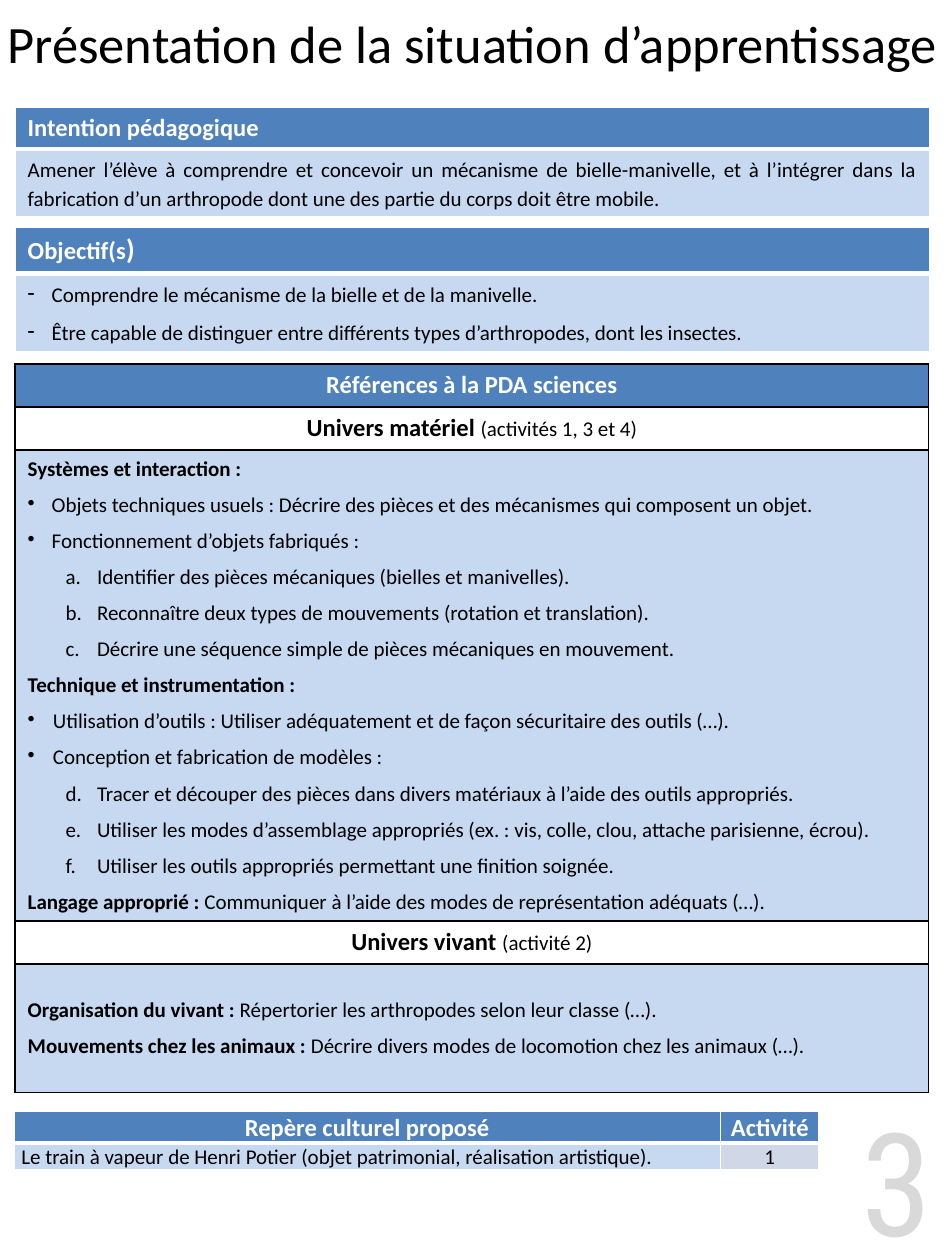
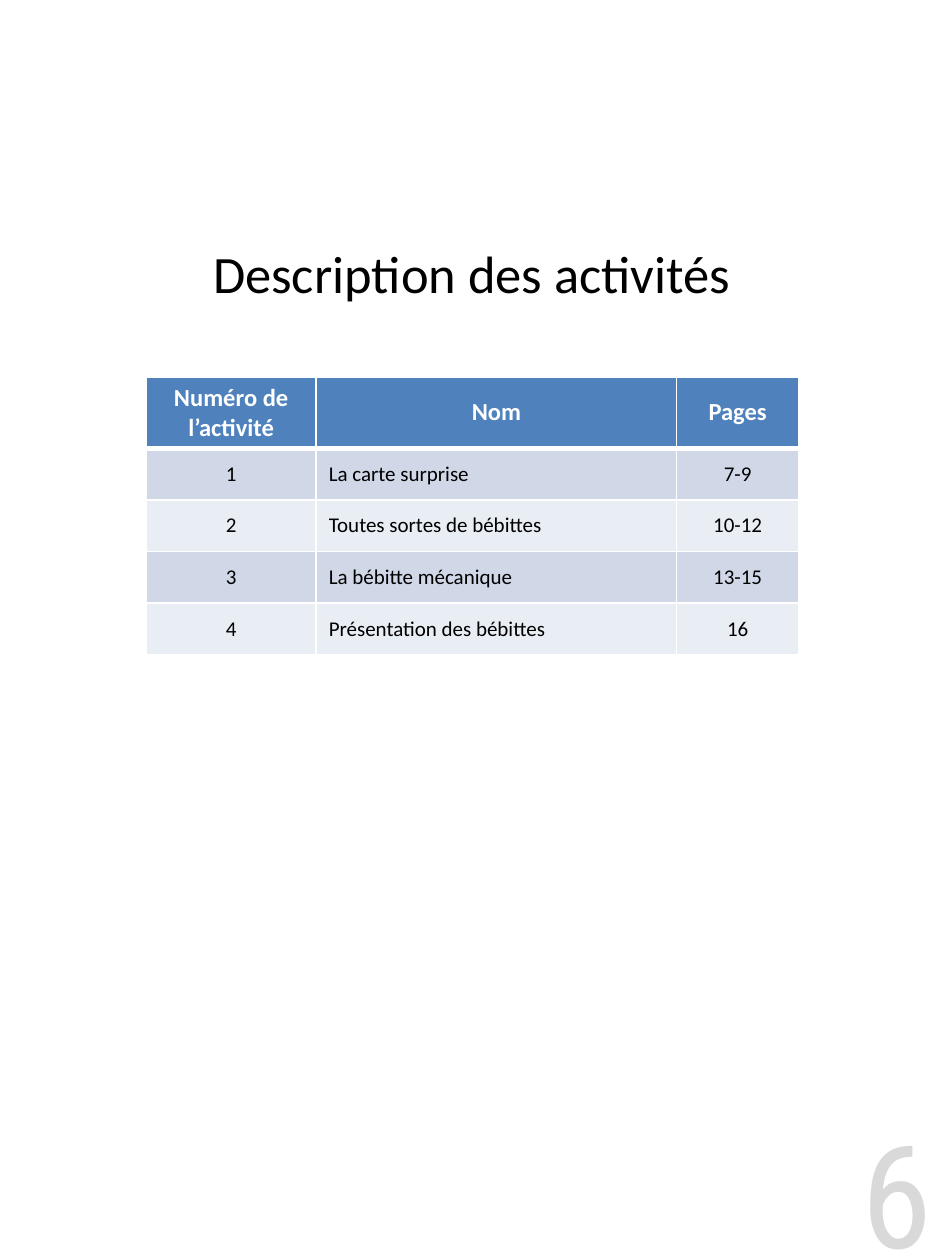
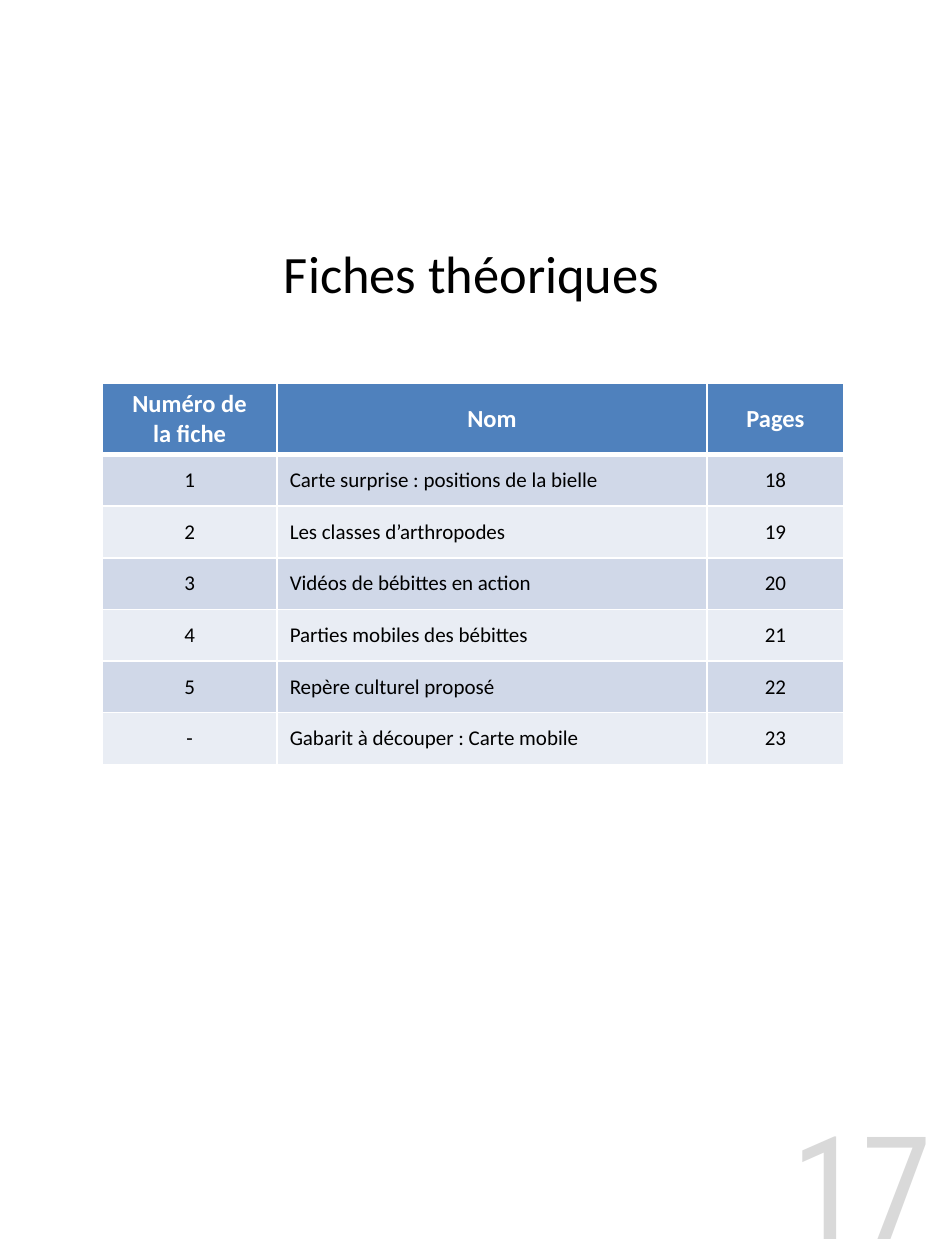
from lxml import etree
from pptx import Presentation
from pptx.dml.color import RGBColor
from pptx.enum.text import MSO_ANCHOR as ANCHOR, PP_ALIGN as ALIGN
from pptx.oxml.ns import qn
from pptx.util import Inches, Pt

# Shared style
FONT, NUMBER_FONT = "Calibri", "Roboto Condensed"
BLACK, WHITE, GREY = "000000", "FFFFFF", "D9D9D9"
BLUE, SKY, BAND, PALE = "4F81BD", "C6D9F1", "D0D8E8", "E9EDF4"
HEAD_PT, BODY_PT = 14, 12
LEFT, CENTER, RIGHT, JUSTIFY = ALIGN.LEFT, ALIGN.CENTER, ALIGN.RIGHT, ALIGN.JUSTIFY
HEAD_EDGES = {"L": 1, "R": 1, "T": 1, "B": 3}
THIN_EDGES = dict.fromkeys("LRTB", 1)


def rgb(code):
    return RGBColor.from_string(code)


def run(text, bold=False, size=BODY_PT, color=BLACK, font=FONT):
    return text, bold, size, color, font


def head(text, size=HEAD_PT):
    return run(text, True, size, WHITE)


def para(*runs, align=LEFT, indent=None, bullet=None, start=1, before=0, spacing=None):
    """Describe one paragraph; indent is (left margin, first line) in inches."""
    return dict(runs=runs, align=align, indent=indent, bullet=bullet,
                start=start, before=before, spacing=spacing)


def write(tf, paras):
    tf.word_wrap = True
    for i, d in enumerate(paras):
        p = tf.paragraphs[0] if i == 0 else tf.add_paragraph()
        p.alignment = d["align"]
        p.space_before = Pt(d["before"])
        if d["spacing"]:
            p.line_spacing = d["spacing"]
        pPr = p._p.get_or_add_pPr()
        if d["indent"]:
            margin, first = d["indent"]
            pPr.set("marL", str(Inches(margin)))
            pPr.set("indent", str(Inches(first)))
        if d["bullet"] == "a.":
            num = etree.SubElement(pPr, qn("a:buAutoNum"), type="alphaLcPeriod")
            if d["start"] > 1:
                num.set("startAt", str(d["start"]))
        elif d["bullet"]:
            etree.SubElement(pPr, qn("a:buChar"), char=d["bullet"])
        for text, bold, size, color, font in d["runs"]:
            r = p.add_run()
            r.text = text
            r.font.name, r.font.size, r.font.bold = font, Pt(size), bold
            r.font.color.rgb = rgb(color)


def text_box(slide, box, paragraph):
    tf = slide.shapes.add_textbox(*map(Inches, box)).text_frame
    tf.vertical_anchor = ANCHOR.MIDDLE
    write(tf, [paragraph])


def title(slide, box, text):
    text_box(slide, box, para(run(text, size=30), align=CENTER))


def page_number(slide, box, number):
    text_box(slide, box, para(run(str(number), size=82, color=GREY, font=NUMBER_FONT),
                              align=RIGHT))


def new_table(slide, x, y, cols, rows):
    sp = slide.shapes.add_table(len(rows), len(cols), Inches(x), Inches(y),
                                Inches(sum(cols)), Inches(sum(rows)))
    tbl = sp.table
    tbl.first_row = tbl.horz_banding = False
    for col, width in zip(tbl.columns, cols):
        col.width = Inches(width)
    for row, height in zip(tbl.rows, rows):
        row.height = Inches(height)
    return tbl


def fill_cell(cell, paras, fill, edges=THIN_EDGES, edge_color=WHITE,
              anchor=ANCHOR.MIDDLE, tight=False):
    tcPr = cell._tc.get_or_add_tcPr()
    for side, width in edges.items():
        ln = etree.SubElement(tcPr, qn("a:ln" + side), w=str(Pt(width)))
        etree.SubElement(etree.SubElement(ln, qn("a:solidFill")),
                         qn("a:srgbClr"), val=edge_color)
    cell.fill.solid()
    cell.fill.fore_color.rgb = rgb(fill)
    cell.vertical_anchor = anchor
    if tight:
        cell.margin_left = cell.margin_right = Inches(0.06)
        cell.margin_top = cell.margin_bottom = 0
    write(cell.text_frame, paras)


def panel(slide, x, y, rows, heading, body, anchor=ANCHOR.MIDDLE):
    """Blue heading above a light body."""
    tbl = new_table(slide, x, y, [7.26], rows)
    fill_cell(tbl.cell(0, 0), [heading], BLUE, HEAD_EDGES, anchor=anchor)
    fill_cell(tbl.cell(1, 0), body, SKY, anchor=anchor)


def references(slide, x, y):
    hang = dict(indent=(0.19, -0.19), before=6)

    def line(label, text=""):
        return para(run(label, True), *([run(text)] if text else []), **hang)

    def points(texts, margin=0.19):
        return [para(run(t), indent=(margin, -margin), before=6, bullet="•") for t in texts]

    def letters(texts, start=1):
        return [para(run(t), indent=(0.55, -0.25), before=6, bullet="a.", start=start)
                for t in texts]

    def universe(name, activities):
        return [para(run(name, True, HEAD_PT), run(activities), align=CENTER, **hang)]

    material = [
        line("Systèmes et interaction :"),
        *points(["Objets techniques usuels : Décrire des pièces et des mécanismes "
                 "qui composent un objet.",
                 "Fonctionnement d’objets fabriqués :"]),
        *letters(["Identifier des pièces mécaniques (bielles et manivelles).",
                  "Reconnaître deux types de mouvements (rotation et translation).",
                  "Décrire une séquence simple de pièces mécaniques en mouvement."]),
        line("Technique et instrumentation :"),
        *points(["Utilisation d’outils : Utiliser adéquatement et de façon sécuritaire "
                 "des outils (…).",
                 "Conception et fabrication de modèles :"], 0.2),
        *letters(["Tracer et découper des pièces dans divers matériaux à l’aide des "
                  "outils appropriés.",
                  "Utiliser les modes d’assemblage appropriés (ex. : vis, colle, clou, "
                  "attache parisienne, écrou).",
                  "Utiliser les outils appropriés permettant une finition soignée."], 4),
        line("Langage approprié : ",
             "Communiquer à l’aide des modes de représentation adéquats (…)."),
    ]
    living = [
        line("Organisation du vivant : ", "Répertorier les arthropodes selon leur classe (…)."),
        line("Mouvements chez les animaux :",
             " Décrire divers modes de locomotion chez les animaux (…)."),
    ]
    rows = [
        (0.34, BLUE, [para(head("Références à la PDA sciences"), align=CENTER)]),
        (0.34, WHITE, universe("Univers matériel ", "(activités 1, 3 et 4)")),
        (3.74, SKY, material),
        (0.34, WHITE, universe("Univers vivant ", "(activité 2)")),
        (1.02, SKY, living),
    ]
    tbl = new_table(slide, x, y, [7.25], [row[0] for row in rows])
    for i, (_, fill, paras) in enumerate(rows):
        fill_cell(tbl.cell(i, 0), paras, fill, edge_color=BLACK)


def cultural_reference(slide, x, y):
    tbl = new_table(slide, x, y, [5.61, 0.78], [0.25, 0.21])
    for c, text in enumerate(["Repère culturel proposé", "Activité"]):
        fill_cell(tbl.cell(0, c), [para(head(text), align=CENTER, spacing=1.07)],
                  BLUE, HEAD_EDGES, tight=True)
    body = [("Le train à vapeur de Henri Potier (objet patrimonial, réalisation artistique).",
             LEFT, SKY), ("1", CENTER, BAND)]
    for c, (text, align, fill) in enumerate(body):
        fill_cell(tbl.cell(1, c), [para(run(text), align=align, spacing=1.07)],
                  fill, tight=True)


def presentation_slide(slide):
    title(slide, (-0.14, -0.01, 7.78, 0.7), "Présentation de la situation d’apprentissage")
    panel(slide, 0.12, 0.85, [0.33, 0.54], para(head("Intention pédagogique")),
          [para(run("Amener l’élève à comprendre et concevoir un mécanisme de "
                    "bielle-manivelle, et à l’intégrer dans la fabrication d’un arthropode "
                    "dont une des partie du corps doit être mobile."),
                align=JUSTIFY, spacing=1.1)])
    goals = ["Comprendre le mécanisme de la bielle et de la manivelle.",
             "Être capable de distinguer entre différents types d’arthropodes, "
             "dont les insectes."]
    panel(slide, 0.12, 1.8, [0.37, 0.62], para(head("Objectif(s"), head(")", 16)),
          [para(run(g), align=JUSTIFY, indent=(0.19, -0.19), bullet="-",
                before=6, spacing=1.1) for g in goals], ANCHOR.TOP)
    references(slide, 0.12, 2.89)
    page_number(slide, (6.28, 8.74, 1.22, 1.24), 3)
    cultural_reference(slide, 0.11, 8.82)


def contents_slide(slide, heading, number, number_box, origin, cols, label, entries):
    """Section title above a numbered list of names and pages."""
    page_number(slide, number_box, number)
    tbl = new_table(slide, *origin, cols, [0.56] + [0.41] * len(entries))
    for c, lines in enumerate([("Numéro de", label), ("Nom",), ("Pages",)]):
        fill_cell(tbl.cell(0, c), [para(head(t), align=CENTER) for t in lines],
                  BLUE, HEAD_EDGES)
    for i, entry in enumerate(entries, 1):
        for c, text in enumerate(entry):
            fill_cell(tbl.cell(i, c), [para(run(text), align=LEFT if c == 1 else CENTER)],
                      BAND if i % 2 else PALE, {**THIN_EDGES, "T": 3 if i == 1 else 1})
    title(slide, (1.41, 1.69, 4.67, 0.95), heading)


def main():
    prs = Presentation()
    prs.slide_width, prs.slide_height = Inches(7.5), Inches(10)
    slides = [prs.slides.add_slide(prs.slide_layouts[6]) for _ in range(3)]
    presentation_slide(slides[0])
    contents_slide(slides[1], "Description des activités", 6, (6.28, 8.9, 1.22, 1.1),
                   (1.16, 2.99), [1.35, 2.86, 0.97], "l’activité",
                   [("1", "La carte surprise", "7-9"),
                    ("2", "Toutes sortes de bébittes", "10-12"),
                    ("3", "La bébitte mécanique", "13-15"),
                    ("4", "Présentation des bébittes", "16")])
    contents_slide(slides[2], "Fiches théoriques", 17, (5.79, 8.76, 1.71, 1.24),
                   (0.81, 3.04), [1.39, 3.41, 1.09], "la fiche",
                   [("1", "Carte surprise : positions de la bielle", "18"),
                    ("2", "Les classes d’arthropodes", "19"),
                    ("3", "Vidéos de bébittes en action", "20"),
                    ("4", "Parties mobiles des bébittes", "21"),
                    ("5", "Repère culturel proposé", "22"),
                    ("-", "Gabarit à découper : Carte mobile", "23")])
    prs.save("out.pptx")


if __name__ == "__main__":
    main()
